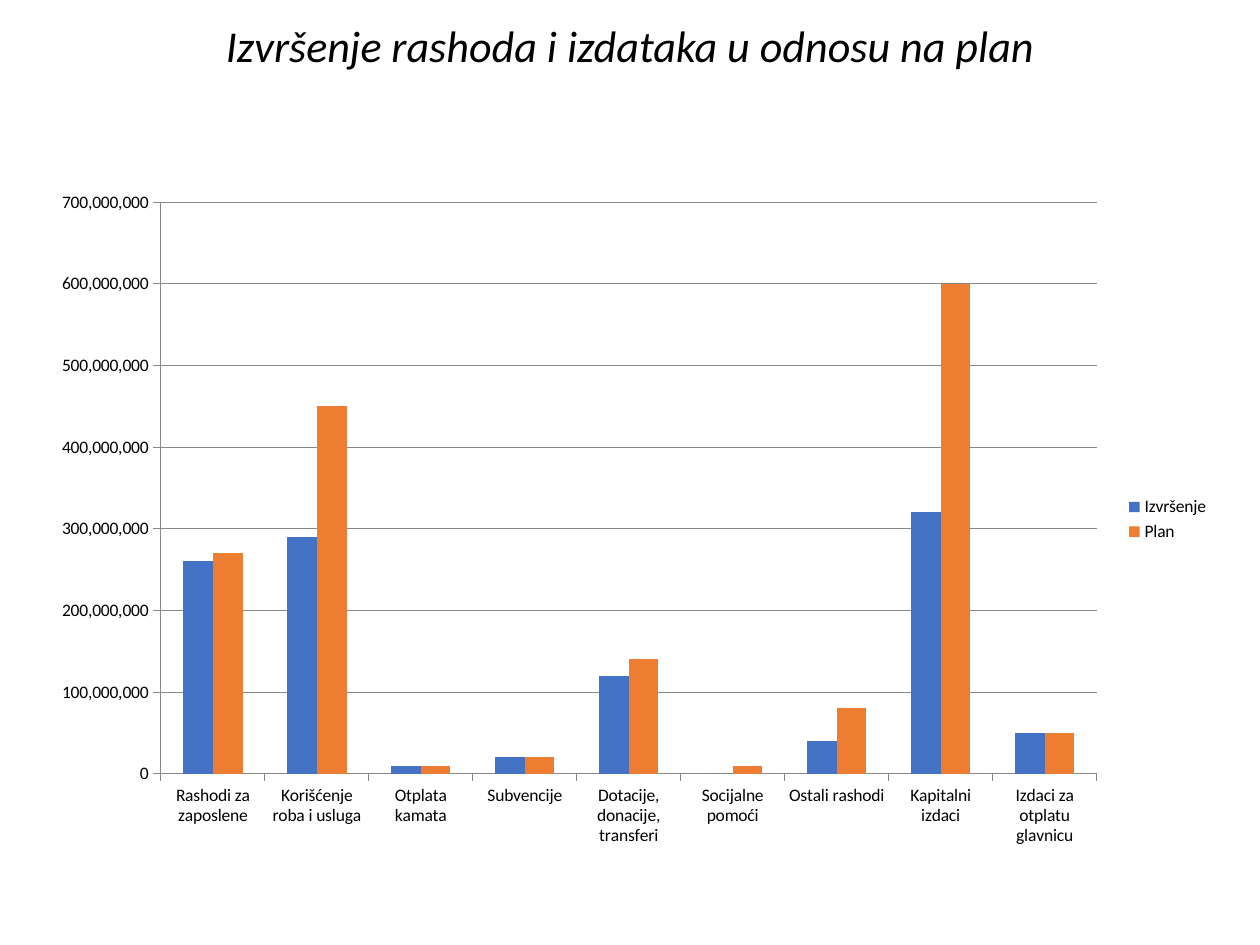
from dataclasses import dataclass

from lxml.etree import SubElement
from pptx import Presentation
from pptx.chart.axis import CategoryAxis, ValueAxis
from pptx.chart.chart import Chart
from pptx.chart.data import CategoryChartData
from pptx.dml.color import RGBColor
from pptx.enum.chart import XL_CHART_TYPE, XL_LEGEND_POSITION, XL_TICK_MARK
from pptx.enum.text import MSO_ANCHOR, MSO_AUTO_SIZE, PP_ALIGN
from pptx.oxml.ns import qn
from pptx.text.text import TextFrame
from pptx.util import Cm, Pt


@dataclass(frozen=True)
class Theme:
    """Colours, typeface and type sizes of the slide."""

    font: str = "Calibri"
    title_size: float = 25.2
    chart_size: float = 10
    ink: RGBColor = RGBColor(0x00, 0x00, 0x00)
    rule: RGBColor = RGBColor(0x87, 0x87, 0x87)
    execution: RGBColor = RGBColor(0x44, 0x72, 0xC4)
    plan: RGBColor = RGBColor(0xED, 0x7D, 0x31)


@dataclass(frozen=True)
class Expense:
    """One expense category with its amounts in millions."""

    label: str
    execution: int
    plan: int


THEME = Theme()
MILLION = 1_000_000
LEFT, WIDTH = Cm(0.76), Cm(23.88)
PLOT_LAYOUT = {"x": 0.104, "y": 0.034, "w": 0.79, "h": 0.84}
EXPENSES = [
    Expense("Rashodi za zaposlene", 260, 270),
    Expense("Korišćenje roba i usluga", 290, 450),
    Expense("Otplata kamata", 10, 10),
    Expense("Subvencije", 20, 20),
    Expense("Dotacije, donacije, transferi", 120, 140),
    Expense("Socijalne pomoći", 0, 10),
    Expense("Ostali rashodi", 40, 80),
    Expense("Kapitalni izdaci", 320, 600),
    Expense("Izdaci za otplatu glavnicu", 50, 50),
]


def write_text(frame: TextFrame, text: str, *, size: float, color: RGBColor,
               italic: bool = False, align: PP_ALIGN = PP_ALIGN.LEFT,
               anchor: MSO_ANCHOR = MSO_ANCHOR.TOP) -> None:
    """Fill a text frame with one formatted paragraph."""
    frame.auto_size = MSO_AUTO_SIZE.NONE
    frame.word_wrap = True
    frame.vertical_anchor = anchor
    frame.margin_top = 0
    paragraph = frame.paragraphs[0]
    paragraph.alignment = align
    paragraph.line_spacing = 0.9
    run = paragraph.add_run()
    run.text = text
    run.font.name = THEME.font
    run.font.size = Pt(size)
    run.font.italic = italic
    run.font.color.rgb = color


def style_axis(axis: CategoryAxis | ValueAxis, gridlines: bool) -> None:
    """Set the line, ticks and gridlines of an axis."""
    axis.major_tick_mark = XL_TICK_MARK.OUTSIDE
    axis.minor_tick_mark = XL_TICK_MARK.NONE
    axis.has_major_gridlines = gridlines
    lines = [axis.format.line]
    if gridlines:
        lines.append(axis.major_gridlines.format.line)
    for line in lines:
        line.color.rgb = THEME.rule
        line.width = Pt(0.5)


def place_plot(chart: Chart) -> None:
    """Fix the inner plot area as fractions of the chart."""
    plot_area = chart.plots[0]._element.getparent()
    for automatic in plot_area.findall(qn("c:layout")):
        plot_area.remove(automatic)
    layout = SubElement(plot_area, qn("c:layout"))
    plot_area.insert(0, layout)
    manual = SubElement(layout, qn("c:manualLayout"))
    settings = {"layoutTarget": "inner", "xMode": "edge", "yMode": "edge", **PLOT_LAYOUT}
    for tag, value in settings.items():
        SubElement(manual, qn(f"c:{tag}")).set("val", str(value))


def style_chart(chart: Chart) -> None:
    """Format the text, axes, columns and legend of the chart."""
    chart.has_title = False
    chart.font.name = THEME.font
    chart.font.size = Pt(THEME.chart_size)
    chart.font.color.rgb = THEME.ink
    chart.has_legend = True
    chart.legend.position = XL_LEGEND_POSITION.RIGHT
    chart.legend.include_in_layout = False
    style_axis(chart.category_axis, gridlines=False)
    style_axis(chart.value_axis, gridlines=True)
    chart.value_axis.minimum_scale = 0
    chart.value_axis.maximum_scale = 700 * MILLION
    chart.value_axis.major_unit = 100 * MILLION
    chart.value_axis.tick_labels.number_format = "#,##0"
    chart.value_axis.tick_labels.number_format_is_linked = False
    columns = chart.plots[0]
    columns.gap_width = 150
    columns.overlap = 0
    columns.vary_by_categories = False
    for series, color in zip(columns.series, (THEME.execution, THEME.plan)):
        series.format.fill.solid()
        series.format.fill.fore_color.rgb = color
    place_plot(chart)


def main() -> None:
    """Build the slide and save it."""
    presentation = Presentation()
    presentation.slide_width, presentation.slide_height = Cm(25.4), Cm(19.05)
    slide = presentation.slides.add_slide(presentation.slide_layouts[5])

    heading = slide.shapes.title
    heading.left, heading.top, heading.width, heading.height = LEFT, Cm(0.5), WIDTH, Cm(3.11)
    write_text(heading.text_frame, "Izvršenje rashoda i izdataka u odnosu na plan",
               size=THEME.title_size, color=THEME.ink, italic=True, align=PP_ALIGN.CENTER)

    budget = CategoryChartData(number_format="#,##0")
    budget.categories = [expense.label for expense in EXPENSES]
    budget.add_series("Izvršenje", [expense.execution * MILLION for expense in EXPENSES])
    budget.add_series("Plan", [expense.plan * MILLION for expense in EXPENSES])
    budget_frame = slide.shapes.add_chart(
        XL_CHART_TYPE.COLUMN_CLUSTERED, LEFT, Cm(3.61), WIDTH, Cm(13.72), budget)
    style_chart(budget_frame.chart)

    presentation.save("out.pptx")


if __name__ == "__main__":
    main()
